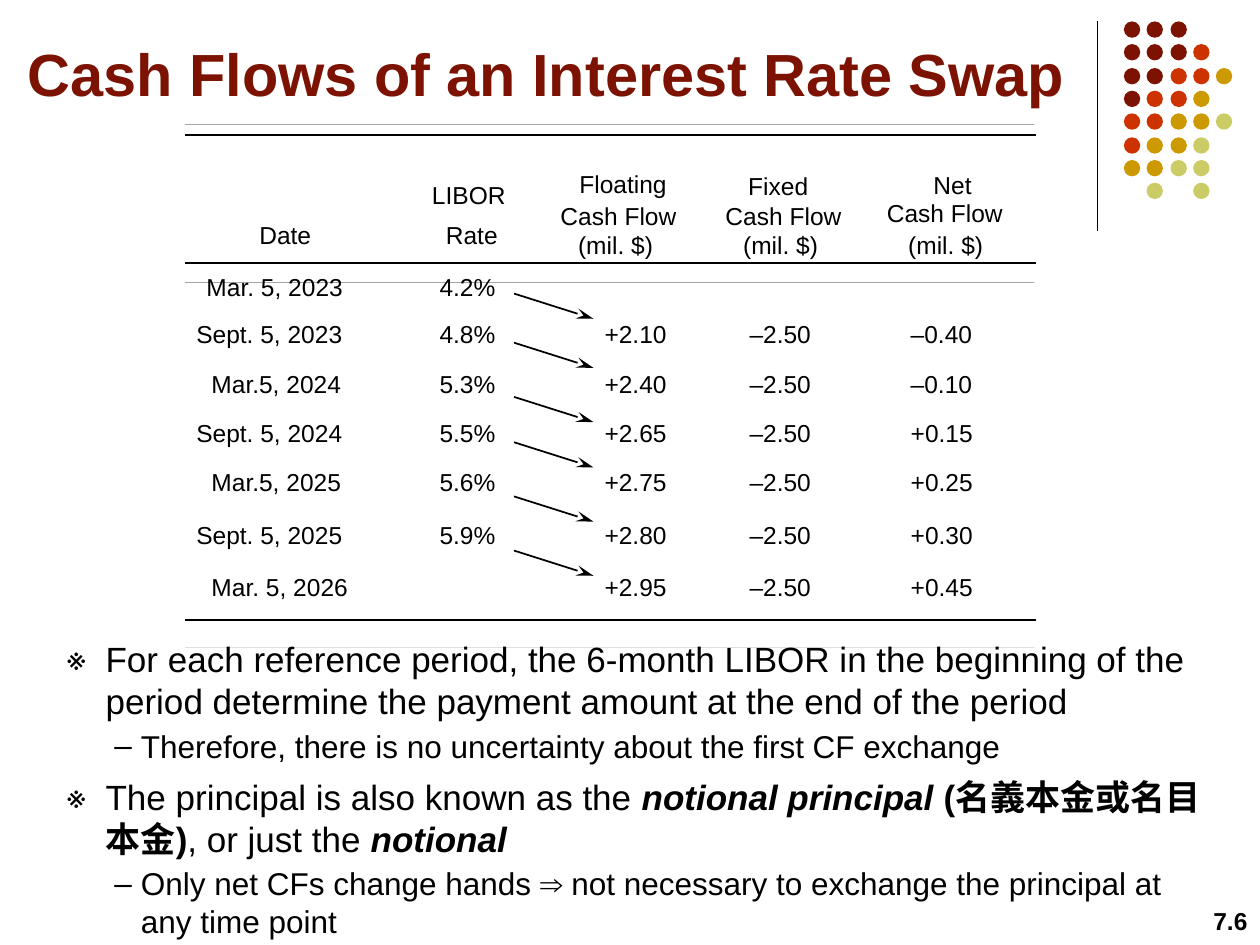
from lxml.etree import SubElement
from pptx import Presentation
from pptx.dml.color import RGBColor
from pptx.enum.shapes import MSO_CONNECTOR as Connector, MSO_SHAPE as Shape
from pptx.enum.text import MSO_ANCHOR as Anchor, MSO_AUTO_SIZE as AutoSize, PP_ALIGN as Align
from pptx.oxml.ns import qn
from pptx.util import Emu, Pt

EMU_PER_PX = 9144
COLORS = {
    "ink": "000000",
    "maroon": "7C1302",
    "red": "CC3300",
    "gold": "CC9900",
    "lime": "CCCC66",
}
DOT_COLORS = {"M": "maroon", "R": "red", "G": "gold", "L": "lime"}
DOT_ROWS = ["MMM", "MMMR", "MMRRG", "MRRG", "RRGGL", "RGGL", "GGLL", " L L"]
DOT_PITCH = 18.3

HEADINGS = [
    ("LIBOR", 333, 138, 79),
    ("Floating", 450, 129, 95),
    ("Fixed", 584, 131, 74),
    ("Net", 731, 130, 51),
    ("Date", 196, 170, 62),
    ("Rate", 344, 170, 62),
    ("Cash Flow", 435, 155, 113),
    ("Cash Flow", 566, 155, 113),
    ("Cash Flow", 694, 152, 113),
    ("(mil. $)", 449, 178, 80),
    ("(mil. $)", 580, 178, 80),
    ("(mil. $)", 711, 178, 80),
]
VALUE_COLUMNS = [(339, 65), (470, 70), (585, 69), (713, 70)]
PAYMENTS = [
    (211, 154, 129, "Mar. 5, 2023", "4.2%", "", "", ""),
    (248, 146, 137, "Sept. 5, 2023", "4.8%", "+2.10", "–2.50", "–0.40"),
    (288, 158, 124, "Mar.5, 2024", "5.3%", "+2.40", "–2.50", "–0.10"),
    (327, 146, 137, "Sept. 5, 2024", "5.5%", "+2.65", "–2.50", "+0.15"),
    (366, 158, 124, "Mar.5, 2025", "5.6%", "+2.75", "–2.50", "+0.25"),
    (408, 146, 137, "Sept. 5, 2025", "5.9%", "+2.80", "–2.50", "+0.30"),
    (449, 158, 129, "Mar. 5, 2026", "", "+2.95", "–2.50", "+0.45"),
]
ARROW_TOPS = [233, 272, 315, 351, 394, 437]
RULE_TOPS = [107, 209, 492]
HAIRLINE_TOPS = [99, 224, 514]

NOTES = [
    (0, 0, [("For each reference period, the 6-month LIBOR in the beginning of the "
             "period determine the payment amount at the end of the period", False, False)]),
    (1, 3, [("Therefore, there is no uncertainty about the first CF exchange", False, False)]),
    (0, 6, [("The principal is also known as the ", False, False),
            ("notional principal ", True, True),
            ("(名義本金或名目本金)", True, False),
            (", or just the ", False, False),
            ("notional", True, True)]),
    (1, 3, [("Only net CFs change hands ⇒ not necessary to exchange the principal "
             "at any time point", False, False)]),
]
NOTE_LEVELS = [
    {"size": 20, "margin": 31, "hanging": 31, "bullet": "※"},
    {"size": 18, "margin": 59, "hanging": 21, "bullet": "–"},
]


def px(length):
    return Emu(length * EMU_PER_PX)


class SlideBuilder:
    font_name = "Arial"

    def __init__(self, slide):
        self.slide = slide
        self.shapes = slide.shapes

    def color(self, key):
        return RGBColor.from_string(COLORS[key])

    def style(self, font, size, color="ink", bold=False):
        font.name = self.font_name
        font.size = Pt(size)
        font.bold = bold
        font.color.rgb = self.color(color)

    def title(self, text, left, top, width, height):
        title = self.shapes.title
        title.left, title.top = px(left), px(top)
        title.width, title.height = px(width), px(height)
        frame = title.text_frame
        frame.text = text
        frame.vertical_anchor = Anchor.MIDDLE
        heading = frame.paragraphs[0]
        heading.alignment = Align.LEFT
        self.style(heading.font, 34, "maroon", True)

    def label(self, text, left, top, width, height=34, bold=False, align=Align.LEFT):
        frame = self.shapes.add_textbox(px(left), px(top), px(width), px(height)).text_frame
        frame.word_wrap = False
        frame.auto_size = AutoSize.SHAPE_TO_FIT_TEXT
        frame.text = text
        paragraph = frame.paragraphs[0]
        paragraph.alignment = align
        self.style(paragraph.font, 14, bold=bold)

    def shape(self, kind, color, left, top, width, height):
        shape = self.shapes.add_shape(kind, px(left), px(top), px(width), px(height))
        shape.shadow.inherit = False
        shape.fill.solid()
        shape.fill.fore_color.rgb = self.color(color)
        shape.line.fill.background()

    def line(self, x1, y1, x2, y2, weight=1, arrow=False):
        line = self.shapes.add_connector(Connector.STRAIGHT, px(x1), px(y1), px(x2), px(y2))
        line.line.color.rgb = self.color("ink")
        line.line.width = Pt(weight)
        properties = line._element.spPr
        if arrow:
            SubElement(properties.find(qn("a:ln")), qn("a:tailEnd"),
                       type="stealth", w="med", len="lg")
        SubElement(properties, qn("a:effectLst"))

    def bullet(self, paragraph, level):
        properties = paragraph._p.get_or_add_pPr()
        properties.set("marL", str(px(level["margin"])))
        properties.set("indent", str(-px(level["hanging"])))
        marks = [
            SubElement(properties, qn("a:buFont"), typeface=self.font_name),
            SubElement(properties, qn("a:buChar"), char=level["bullet"]),
        ]
        default_font = properties.find(qn("a:defRPr"))
        for mark in marks:
            default_font.addprevious(mark)

    def notes(self, entries, left, top, width, height):
        frame = self.shapes.add_textbox(px(left), px(top), px(width), px(height)).text_frame
        frame.word_wrap = True
        frame.auto_size = AutoSize.SHAPE_TO_FIT_TEXT
        for index, (depth, space_before, pieces) in enumerate(entries):
            paragraph = frame.add_paragraph() if index else frame.paragraphs[0]
            paragraph.level = depth
            paragraph.space_before = Pt(space_before)
            self.style(paragraph.font, NOTE_LEVELS[depth]["size"])
            self.bullet(paragraph, NOTE_LEVELS[depth])
            for text, bold, italic in pieces:
                run = paragraph.add_run()
                run.text = text
                run.font.bold = bold
                run.font.italic = italic


def main():
    deck = Presentation()
    deck.slide_width, deck.slide_height = px(1000), px(750)
    builder = SlideBuilder(deck.slides.add_slide(deck.slide_layouts[5]))

    builder.line(871, 17, 871, 183, weight=0.75)
    for row, codes in enumerate(DOT_ROWS):
        for column, code in enumerate(codes):
            if code in DOT_COLORS:
                builder.shape(Shape.OVAL, DOT_COLORS[code], 892 + round(column * DOT_PITCH),
                              17 + round(row * DOT_PITCH), 13, 13)

    builder.label("7.6", 933, 714, 67, 36, bold=True, align=Align.RIGHT)
    builder.title("Cash Flows of an Interest Rate Swap", 12, 13, 858, 89)
    builder.notes(NOTES, 43, 501, 921, 259)

    for top in ARROW_TOPS:
        builder.line(408, top, 471, top + 20, arrow=True)
    for rule_top, hairline_top in zip(RULE_TOPS, HAIRLINE_TOPS):
        builder.line(147, rule_top, 822, rule_top)
        builder.shape(Shape.RECTANGLE, "ink", 147, hairline_top, 674, 0)

    for heading in HEADINGS:
        builder.label(*heading)
    for top, date_left, date_width, date, *values in PAYMENTS:
        builder.label(date, date_left, top, date_width)
        for (left, width), value in zip(VALUE_COLUMNS, values):
            if value:
                builder.label(value, left, top, width)

    deck.save("out.pptx")


if __name__ == "__main__":
    main()
